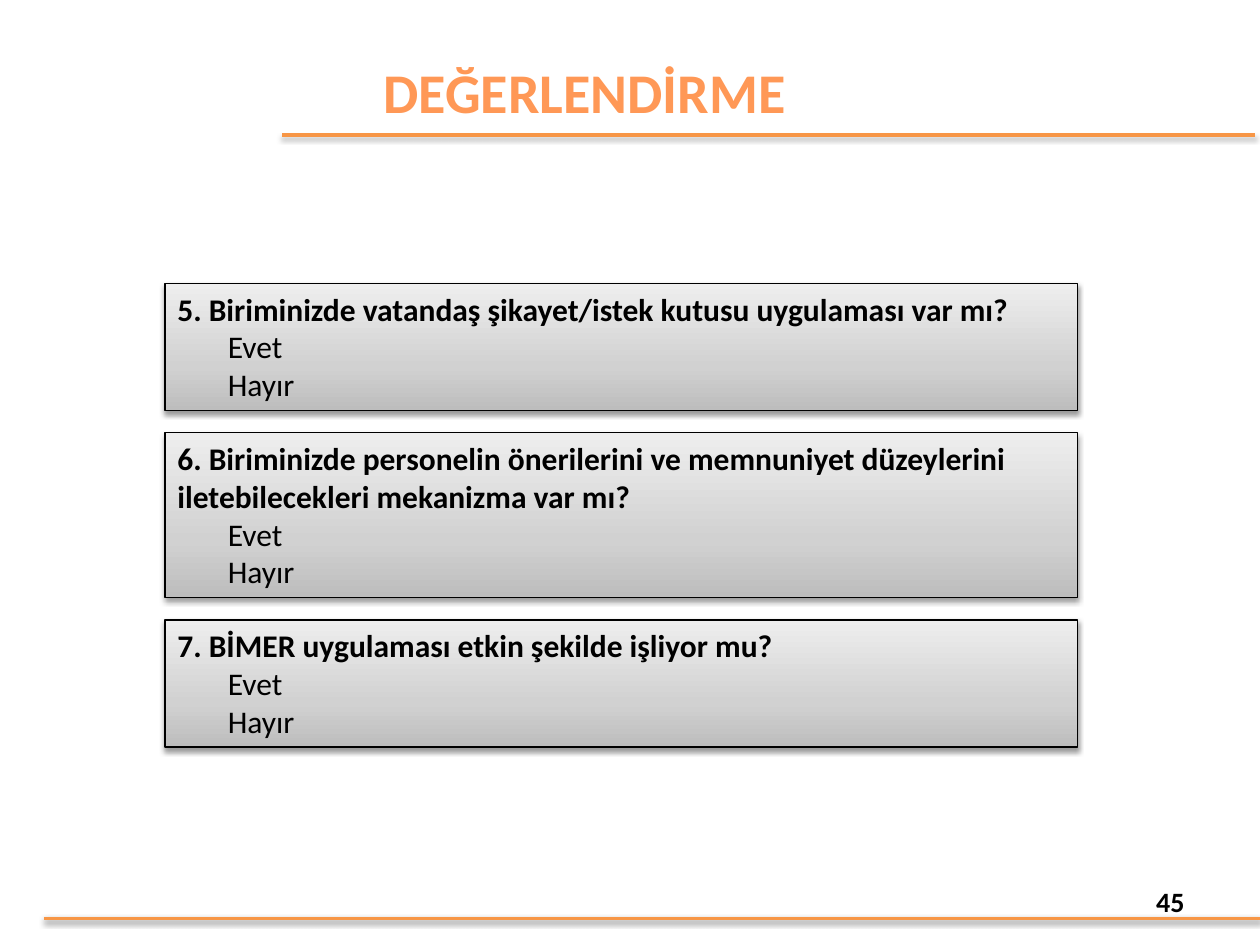
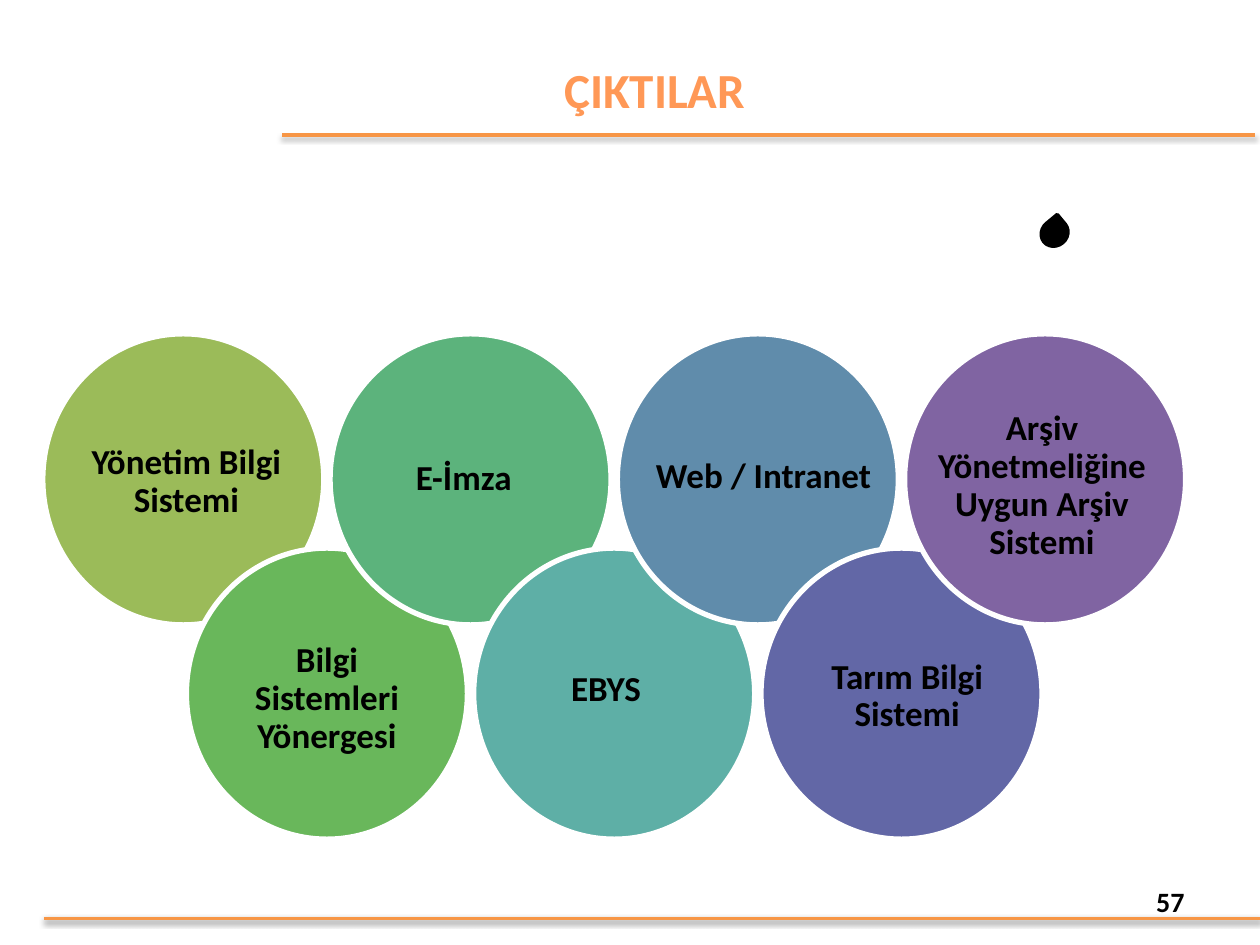
from copy import deepcopy

from pptx import Presentation
from pptx.dml.color import RGBColor
from pptx.enum.shapes import MSO_CONNECTOR, MSO_SHAPE
from pptx.enum.text import MSO_ANCHOR, MSO_AUTO_SIZE, PP_ALIGN
from pptx.oxml import parse_xml
from pptx.oxml.ns import nsdecls, qn
from pptx.util import Inches, Pt

STRAIGHT = MSO_CONNECTOR.STRAIGHT
RECTANGLE, OVAL, TEARDROP = MSO_SHAPE.RECTANGLE, MSO_SHAPE.OVAL, MSO_SHAPE.TEAR
TOP, MIDDLE = MSO_ANCHOR.TOP, MSO_ANCHOR.MIDDLE
LEFT, CENTER, RIGHT = PP_ALIGN.LEFT, PP_ALIGN.CENTER, PP_ALIGN.RIGHT
GROW, FIXED = MSO_AUTO_SIZE.SHAPE_TO_FIT_TEXT, MSO_AUTO_SIZE.NONE

COLORS = {
    "rule": "F79646", "title": "FF9856", "ink": "000000", "paper": "FFFFFF",
    "dark grey": "BDBDBD", "mid grey": "D1D1D1", "light grey": "EEEEEE",
}
RGB = {name: RGBColor.from_string(value) for name, value in COLORS.items()}
SHADOW = (
    f'<a:effectLst {nsdecls("a")}><a:outerShdw blurRad="40000" dist="20000" '
    'dir="5400000" rotWithShape="0"><a:srgbClr val="000000"><a:alpha val="38000"/>'
    "</a:srgbClr></a:outerShdw></a:effectLst>"
)

deck = Presentation()
deck.slide_width, deck.slide_height = Inches(10), Inches(7.5)
COLUMN, ROW = deck.slide_width / 100, deck.slide_height / 100
LINE_ROWS, PADDING_ROWS = 4, 1.47


def area(left, top, width, height):
    return [round(n * unit) for n, unit in zip((left, top, width, height), (COLUMN, ROW) * 2)]


def write(shape, lines, size, align=CENTER, anchor=TOP, autosize=FIXED, color="ink", spacing=1.0):
    frame = shape.text_frame
    frame.text = "\n".join(lines)
    for name, value in {"word_wrap": True, "auto_size": autosize, "vertical_anchor": anchor}.items():
        setattr(frame, name, value)
    font_format = {"name": "Calibri", "size": Pt(size), "bold": True}
    for paragraph in frame.paragraphs:
        paragraph.alignment, paragraph.line_spacing = align, spacing
        for name, value in font_format.items():
            setattr(paragraph.font, name, value)
        paragraph.font.color.rgb = RGB[color]
    return frame


layout = deck.slide_layouts[5]
pages = []
for heading, size, place, number in [
    ("DEĞERLENDİRME", 32, (22.4, 1.73, 48, 15.73), "45"),
    ("ÇIKTILAR", 28, (16.9, 5.87, 70.1, 7.07), "57"),
]:
    page = deck.slides.add_slide(layout)
    title = page.shapes.title
    title.left, title.top, title.width, title.height = area(*place)
    write(title, [heading], size, anchor=MIDDLE, color="title")
    page_number = page.shapes.add_textbox(*area(71.7, 92.67, 23.3, 5.33))
    write(page_number, [number], 16, RIGHT, MIDDLE)
    pages.append(page)
evaluation, outputs = pages

for start, end, height in [(3.5, 100, 97.2), (22.4, 99.6, 14.27)]:
    rule = evaluation.shapes.add_connector(STRAIGHT, *area(start, height, end, height))
    rule.line.color.rgb, rule.line.width = RGB["rule"], Pt(2)
    rule.element.spPr.append(parse_xml(SHADOW))
    layout.shapes.element.append(rule.element)

top = 30
for question, question_lines in [
    ("5. Biriminizde vatandaş şikayet/istek kutusu uygulaması var mı?", 1),
    ("6. Biriminizde personelin önerilerini ve memnuniyet düzeylerini iletebilecekleri mekanizma var mı?", 2),
    ("7. BİMER uygulaması etkin şekilde işliyor mu?", 1),
]:
    answers = ["Evet", "Hayır"]
    height = PADDING_ROWS + LINE_ROWS * (question_lines + len(answers))
    card = evaluation.shapes.add_shape(RECTANGLE, *area(13.1, top, 72.4, height))
    card.fill.gradient()
    card.fill.gradient_angle = 90
    stops = card.element.spPr.find(".//" + qn("a:gsLst"))
    stops.insert(1, deepcopy(stops[0]))
    shades = [(0, "dark grey"), (0.35, "mid grey"), (1, "light grey")]
    for stop, (position, shade) in zip(card.fill.gradient_stops, shades):
        stop.position, stop.color.rgb = position, RGB[shade]
    card.line.color.rgb, card.line.width = RGB["ink"], Pt(0.75)
    card.element.spPr.append(parse_xml(SHADOW))
    frame = write(card, [question] + answers, 18, LEFT, autosize=GROW)
    for answer in frame.paragraphs[1:]:
        answer.font.bold = False
        answer._p.get_or_add_pPr().set("marL", str(round(4 * COLUMN)))
    top += height + 2.33

systems = [
    ("Yönetim Bilgi Sistemi", "9BBB59", 5.1, 46.4, 19.4, 2),
    ("Bilgi Sistemleri Yönergesi", "69B75B", 17.5, 67.33, 16.9, 3),
    ("E-İmza", "5CB37C", 31.4, 48, 10.8, 1),
    ("EBYS", "5EAFA6", 43.5, 70.4, 9.2, 1),
    ("Web / Intranet", "608CAB", 50, 47.87, 21.2, 1),
    ("Tarım Bilgi Sistemi", "6267A6", 61.4, 69.07, 21.2, 2),
    ("Arşiv Yönetmeliğine Uygun Arşiv Sistemi", "8064A2", 71.8, 42.8, 21.8, 4),
]
for index, (system, color, *_) in enumerate(systems):
    circle = outputs.shapes.add_shape(
        OVAL, *area(3.4 + 11.4 * index, 35.33 + 22.67 * (index % 2), 22.3, 30.8))
    circle.shadow.inherit = False
    circle.fill.solid()
    circle.fill.fore_color.rgb = RGBColor.from_string(color)
    circle.line.color.rgb, circle.line.width = RGB["paper"], Pt(3)

drop = outputs.shapes.add_shape(TEARDROP, *area(82.6, 23.33, 2.2, 2.67))
drop.rotation = 320.3
drop.shadow.inherit = False
drop.fill.solid()
drop.fill.fore_color.rgb = RGB["ink"]
drop.line.color.rgb, drop.line.width = RGB["ink"], Pt(2)

for system, _, left, top, width, lines in systems:
    label = outputs.shapes.add_textbox(*area(left, top, width, PADDING_ROWS + LINE_ROWS * lines))
    write(label, [system], 20, autosize=GROW, spacing=0.9)

deck.save("out.pptx")
